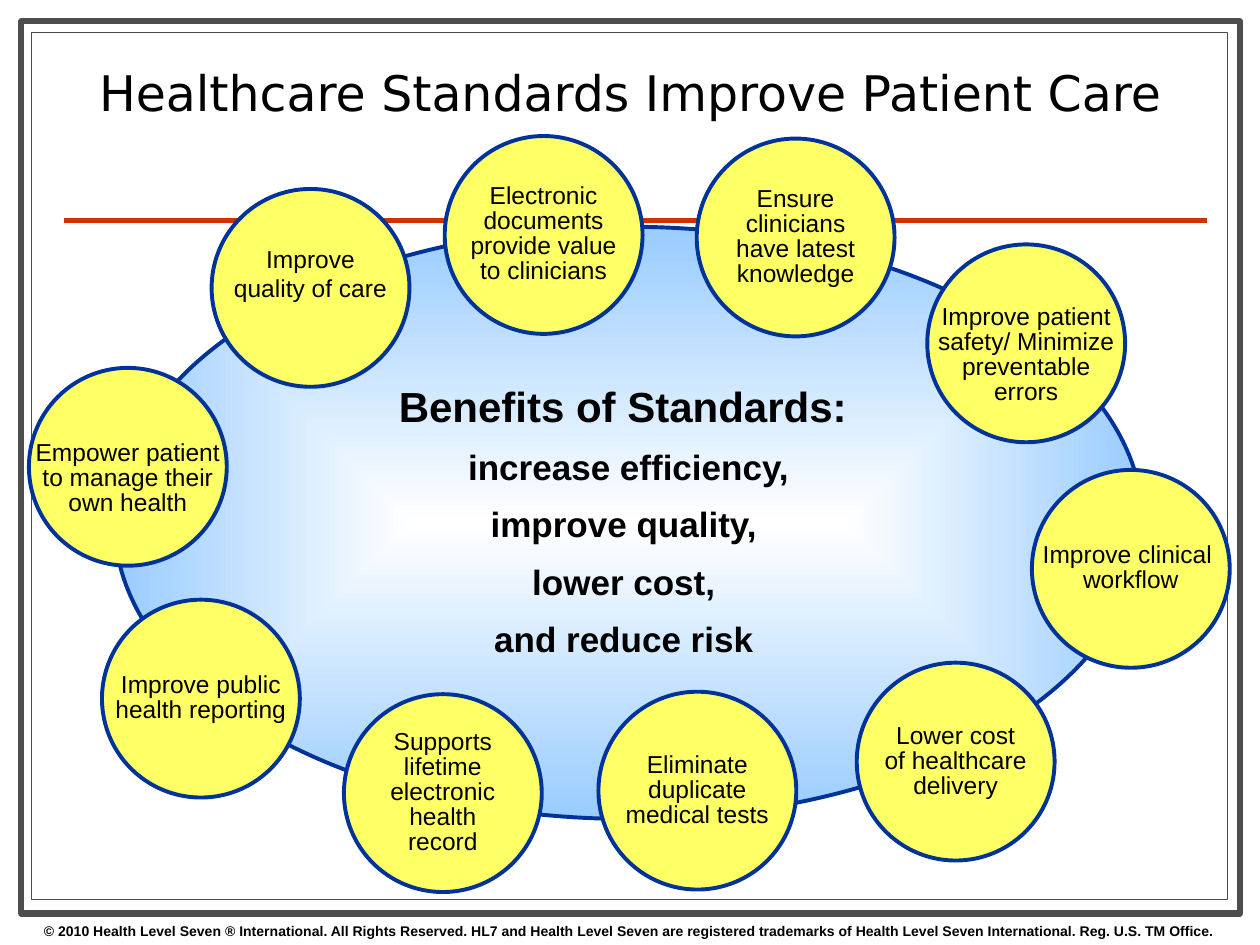
from lxml import etree
from pptx import Presentation
from pptx.dml.color import RGBColor
from pptx.enum.shapes import MSO_CONNECTOR, MSO_SHAPE
from pptx.enum.text import MSO_ANCHOR, PP_ALIGN
from pptx.oxml.ns import qn
from pptx.util import Inches, Pt

RECT, OVAL = MSO_SHAPE.RECTANGLE, MSO_SHAPE.OVAL
STRAIGHT = MSO_CONNECTOR.STRAIGHT
MIDDLE, BOTTOM = MSO_ANCHOR.MIDDLE, MSO_ANCHOR.BOTTOM
CENTER = PP_ALIGN.CENTER
NAVY = "003399"
SIZE = 1.57  # diameter of a benefit circle


def color(code):
    return RGBColor.from_string(code)


def add_form(kind, box, fill, line, width):
    """Add a filled, outlined shape without shadow."""
    form = slide.shapes.add_shape(kind, *[Inches(n) for n in box])
    form.shadow.inherit = False
    form.fill.solid()
    form.fill.fore_color.rgb = color(fill)
    form.line.color.rgb = color(line)
    form.line.width = Pt(width)
    return form


prs = Presentation()
prs.slide_width, prs.slide_height = Inches(10), Inches(7.5)
slide = prs.slides.add_slide(prs.slide_layouts[5])

# Double frame and red rule
add_form(RECT, (0.17, 0.17, 9.67, 7.08), "FFFFFF", "4D4D4D", 3.5)
add_form(RECT, (0.25, 0.26, 9.49, 6.88), "FFFFFF", "4D4D4D", 0.75)
rule = slide.shapes.add_connector(
    STRAIGHT, Inches(0.51), Inches(1.75), Inches(9.58), Inches(1.75))
rule.line.color.rgb = color("CC3300")
rule.line.width = Pt(3)
etree.SubElement(rule.element.spPr, qn("a:effectLst"))

# Copyright line
note = slide.shapes.add_textbox(
    Inches(0.25), Inches(7.27), Inches(9.5), Inches(0.23))
note.text_frame.word_wrap = False
note.text_frame.text = (
    "© 2010 Health Level Seven ® International. All Rights Reserved. "
    "HL7 and Health Level Seven are registered trademarks of "
    "Health Level Seven International. Reg. U.S. TM Office.")
font = note.text_frame.paragraphs[0].runs[0].font
font.name, font.size, font.bold = "Arial", Pt(8), True
font.color.rgb = color("000000")

# Central ellipse, white in the middle and blue at the rim
hub = add_form(OVAL, (0.91, 1.8, 8.16, 4.7), "99CCFF", NAVY, 2.25)
hub.fill.gradient()
for stop, code in zip(hub.fill.gradient_stops, ("FFFFFF", "99CCFF")):
    stop.color.rgb = color(code)
grad = hub.element.spPr.find(qn("a:gradFill"))
shade = etree.Element(qn("a:path"), path="shape")
etree.SubElement(shade, qn("a:fillToRect"),
                 l="50000", t="50000", r="50000", b="50000")
grad.replace(grad.find(qn("a:lin")), shade)

frame = hub.text_frame
frame.word_wrap = False
frame.vertical_anchor = MIDDLE
frame.margin_left = frame.margin_right = 0
frame.margin_top = frame.margin_bottom = 0
frame.text = ("Benefits of Standards: \nincrease efficiency,\n"
              "improve quality, \nlower cost, \nand reduce risk ")
for i, para in enumerate(frame.paragraphs):
    para.alignment = CENTER
    para.line_spacing = 0.9
    if i:
        para.space_before = Pt(11)
    font = para.runs[0].font
    font.name, font.bold = "Arial", True
    font.size = Pt(20 if i else 24)
    font.color.rgb = color("000000")

# Title, lifted above the frame
title = slide.shapes.title
title.left, title.top = Inches(0.25), Inches(0.26)
title.width, title.height = Inches(9.5), Inches(0.75)
title.text_frame.text = "Healthcare Standards Improve Patient Care"
title.text_frame.vertical_anchor = BOTTOM
para = title.text_frame.paragraphs[0]
para.alignment = CENTER
para.line_spacing = 0.8
font = para.runs[0].font
font.name, font.size = "DejaVu Sans", Pt(28)
font.color.rgb = color("000000")
hub.element.addnext(title.element)

# Benefits clockwise: left, top, text, line spacing, top and bottom inset
benefits = [
    (1.68, 1.5, "Improve\vquality of care", 1.0, 0.05, 0.28),
    (3.53, 1.08, "Electronic\ndocuments\nprovide value\nto clinicians",
     0.85, 0.05, 0.05),
    (5.53, 1.1, "Ensure\nclinicians\nhave latest\nknowledge",
     0.85, 0.05, 0.05),
    (7.36, 1.94, "Improve patient\nsafety/ Minimize\npreventable\nerrors",
     0.85, 0.25, 0.05),
    (8.19, 3.73, "Improve clinical \nworkflow", 0.85, 0.05, 0.05),
    (6.8, 5.26, "Lower cost\nof healthcare\ndelivery", 0.85, 0.05, 0.05),
    (4.75, 5.49, "Eliminate\nduplicate\nmedical tests", 0.85, 0.05, 0.05),
    (2.73, 5.51, "Supports\nlifetime\nelectronic\nhealth\nrecord",
     0.85, 0.05, 0.05),
    (0.81, 4.76, "Improve public\nhealth reporting", 0.85, 0.05, 0.05),
    (0.23, 2.92, "Empower patient\nto manage their\nown health",
     0.85, 0.25, 0.05),
]
for left, top, text, space, above, below in benefits:
    disc = add_form(OVAL, (left, top, SIZE, SIZE), "FFFF66", NAVY, 2.25)
    frame = disc.text_frame
    frame.word_wrap = False
    frame.vertical_anchor = MIDDLE
    frame.margin_top, frame.margin_bottom = Inches(above), Inches(below)
    frame.text = text
    for para in frame.paragraphs:
        para.alignment = CENTER
        para.line_spacing = space
        for run in para.runs:
            run.font.name, run.font.size = "Arial", Pt(14)
            run.font.color.rgb = color("000000")

prs.save("out.pptx")
